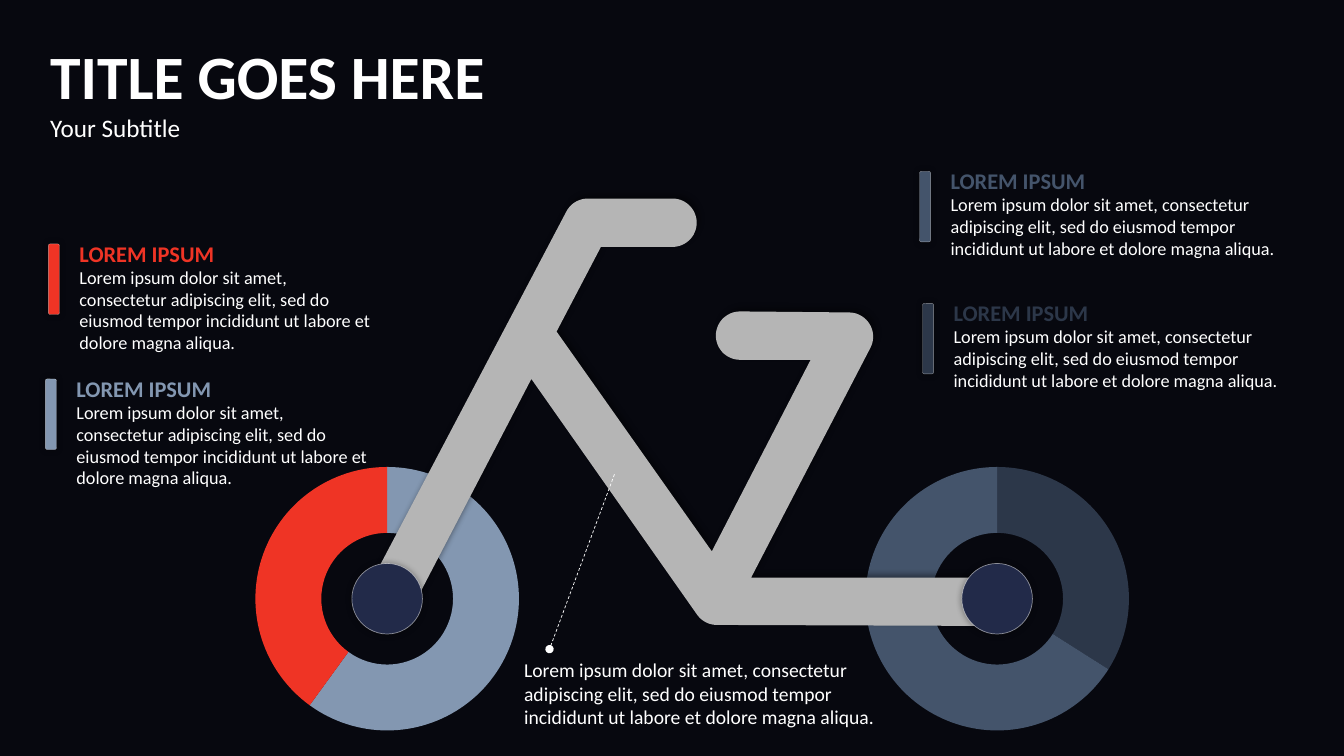
import math

import lxml.etree
import pptx
import pptx.chart.data
import pptx.dml.color
import pptx.enum.chart
import pptx.enum.dml
import pptx.enum.shapes
import pptx.enum.text
import pptx.oxml
import pptx.oxml.ns
import pptx.util

Inches = pptx.util.Inches
FONT = "Calibri"
COLORS = {
    "background": "07080F", "hub": "222A49", "frame": "B5B5B5",
    "white": "FFFFFF", "black": "000000", "red": "EF3425",
    "light": "8397B1", "slate": "44546B", "navy": "2C3749",
    "gray": "A5A5A5", "green": "548235", "orange": "ED7D31",
}
HEADING = "LOREM IPSUM"
BODY = ("Lorem ipsum dolor sit amet, consectetur adipiscing elit, sed do "
        "eiusmod tempor incididunt ut labore et dolore magna aliqua.")
TITLE = [
    ("TITLE GOES HERE", {"size": 44, "bold": True}),
    ("Your Subtitle", {"size": 18, "bold": False}),
]
# centre x, values, point colours
WHEELS = [
    (3.84, (60, 40, 0, 0), ("light", "red", "gray", "green")),
    (9.89, (0, 0, 34, 66), ("green", "orange", "navy", "slate")),
]
WHEEL_Y = 5.94
CHART_WIDTH, CHART_HEIGHT, HUB_SIZE = 3.2, 2.89, 0.7
# bar left, bar top, text width, body height, colour
CALLOUTS = [
    (0.45, 3.76, 3.1, 1.0, "light"),
    (0.48, 2.42, 3.1, 1.0, "red"),
    (9.12, 1.7, 3.7, 0.76, "slate"),
    (9.15, 3.01, 3.7, 0.76, "navy"),
]
# Corners are (x, y); rounded tube ends are (centre x, centre y, start, end)
TUBE_RADIUS = 0.24
BIKE_OUTLINE = [
    (6.67, 2.21, -90, 90), (5.96, 2.45), (5.52, 3.29), (7.06, 5.47),
    (8.04, 3.57), (7.34, 3.33, 90, 270), (8.42, 3.34, -90, 27),
    (7.45, 5.73), (9.88, 5.97, -90, 90), (7.11, 5.96, 90, 145),
    (5.27, 3.76), (3.86, 5.95, 27, 207), (5.83, 2.21, 207, 270),
]


def color(name):
    return pptx.dml.color.RGBColor.from_string(COLORS[name])


def paint(fill, name):
    fill.solid()
    fill.fore_color.rgb = color(name)


def add_child(parent, xml):
    namespace = pptx.oxml.ns.nsdecls("a")
    parent.append(pptx.oxml.parse_xml(xml.replace(" ", f" {namespace} ", 1)))


def add_shadow(shape, blur, distance=0, direction=0):
    shape.shadow.inherit = False
    effects = shape._element.spPr.find(pptx.oxml.ns.qn("a:effectLst"))
    add_child(effects, f'<a:outerShdw blurRad="{pptx.util.Pt(blur)}" '
              f'dist="{pptx.util.Pt(distance)}" dir="{direction * 60000}" '
              f'rotWithShape="0"><a:srgbClr val="{COLORS["black"]}">'
              '<a:alpha val="40000"/></a:srgbClr></a:outerShdw>')


def add_outlined_shape(slide, kind, box, fill, line_width):
    """Add a shape with a half-transparent white outline and a soft shadow."""
    shape = slide.shapes.add_shape(kind, *map(Inches, box))
    paint(shape.fill, fill)
    paint(shape.line.fill, "white")
    shape.line.width = pptx.util.Pt(line_width)
    line_color = shape.line._ln.find(".//" + pptx.oxml.ns.qn("a:srgbClr"))
    add_child(line_color, '<a:alpha val="50000"/>')
    add_shadow(shape, 5)


def add_text(slide, box, paragraphs):
    frame = slide.shapes.add_textbox(*map(Inches, box)).text_frame
    frame.word_wrap = True
    frame.auto_size = pptx.enum.text.MSO_AUTO_SIZE.SHAPE_TO_FIT_TEXT
    for index, (text, formats) in enumerate(paragraphs):
        paragraph = frame.add_paragraph() if index else frame.paragraphs[0]
        paragraph.text = text
        values = {"name": FONT, "color": "white", **formats}
        paragraph.font.color.rgb = color(values.pop("color"))
        values["size"] = pptx.util.Pt(values["size"])
        for name, value in values.items():
            setattr(paragraph.font, name, value)


def add_wheel(slide, center_x, values, point_colors):
    data = pptx.chart.data.CategoryChartData()
    data.categories = ["1", "2", "3", "4"]
    data.add_series("Series 1", values)
    box = (center_x - CHART_WIDTH / 2, WHEEL_Y - CHART_HEIGHT / 2,
           CHART_WIDTH, CHART_HEIGHT)
    chart = slide.shapes.add_chart(
        pptx.enum.chart.XL_CHART_TYPE.DOUGHNUT, *map(Inches, box), data).chart
    chart.has_legend = False
    chart.has_title = False
    chart.font.name = FONT
    chart.font.size = pptx.util.Pt(18)
    chart.font.color.rgb = color("black")
    plot = chart.plots[0]
    plot.vary_by_categories = True
    plot._element.find(pptx.oxml.ns.qn("c:holeSize")).set("val", "72")
    for index, name in enumerate(point_colors):
        point = plot.series[0].points[index]
        paint(point.format.fill, name)
        point.format.line.fill.background()


def bike_points():
    """Turn corners and rounded ends into one list of points."""
    points = []
    for x, y, *angles in BIKE_OUTLINE:
        if not angles:
            points.append((Inches(x), Inches(y)))
            continue
        start, end = angles
        steps = math.ceil((end - start) / 6)
        for step in range(steps + 1):
            angle = math.radians(start + (end - start) * step / steps)
            points.append((Inches(x + TUBE_RADIUS * math.cos(angle)),
                           Inches(y + TUBE_RADIUS * math.sin(angle))))
    return points


def add_bike(slide):
    points = bike_points()
    builder = slide.shapes.build_freeform(*points[0])
    builder.add_line_segments(points[1:], close=True)
    bike = builder.convert_to_shape()
    paint(bike.fill, "frame")
    bike.line.fill.background()
    add_shadow(bike, 4, 3, 315)


def add_callout(slide, left, top, width, body_height, name):
    text_left, heading_top = left + 0.21, top - 0.09
    add_text(slide, (text_left, heading_top + 0.26, width, body_height),
             [(BODY, {"size": 13})])
    add_text(slide, (text_left, heading_top, width, 0.37),
             [(HEADING, {"size": 16, "bold": True, "color": name})])
    add_outlined_shape(slide, pptx.enum.shapes.MSO_SHAPE.ROUNDED_RECTANGLE,
                       (left, top, 0.11, 0.7), name, 0.25)


def add_pointer(slide):
    pointer = slide.shapes.add_connector(
        pptx.enum.shapes.MSO_CONNECTOR.STRAIGHT,
        *map(Inches, (5.45, 6.44, 6.1, 4.69)))
    paint(pointer.line.fill, "white")
    pointer.line.width = pptx.util.Pt(0.5)
    pointer.line.dash_style = pptx.enum.dml.MSO_LINE.DASH
    add_child(pointer.line._ln, '<a:headEnd type="oval"/>')
    lxml.etree.SubElement(pointer._element.spPr,
                          pptx.oxml.ns.qn("a:effectLst"))


def main():
    presentation = pptx.Presentation()
    presentation.slide_width = Inches(13.33)
    presentation.slide_height = Inches(7.5)
    slide = presentation.slides.add_slide(presentation.slide_layouts[6])
    paint(slide.background.fill, "background")
    for wheel in WHEELS:
        add_wheel(slide, *wheel)
    add_bike(slide)
    for center_x, *_ in WHEELS:
        add_outlined_shape(
            slide, pptx.enum.shapes.MSO_SHAPE.OVAL,
            (center_x - HUB_SIZE / 2, WHEEL_Y - HUB_SIZE / 2,
             HUB_SIZE, HUB_SIZE), "hub", 0.5)
    for callout in CALLOUTS:
        add_callout(slide, *callout)
    add_pointer(slide)
    add_text(slide, (5.1, 6.48, 3.83, 0.81), [(BODY, {"size": 14})])
    add_text(slide, (0.4, 0.33, 6.5, 1.14), TITLE)
    presentation.save("out.pptx")


if __name__ == "__main__":
    main()
